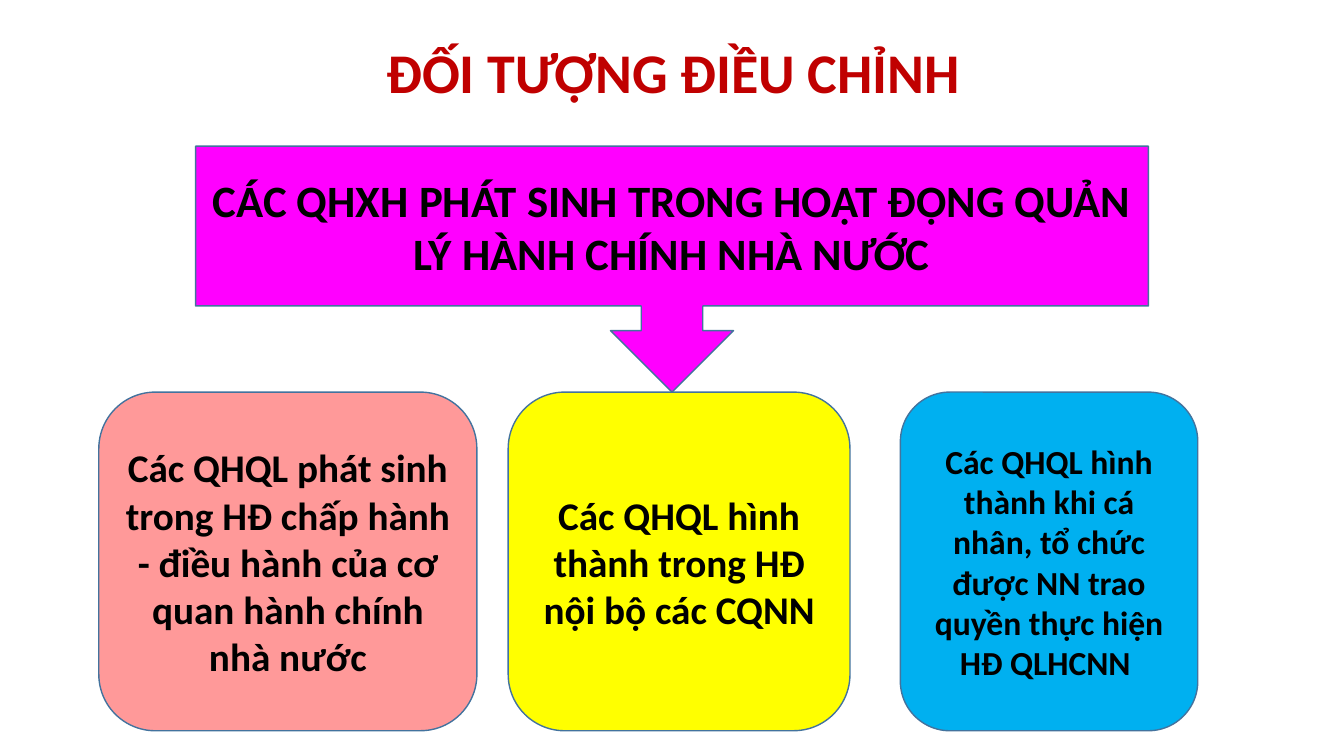
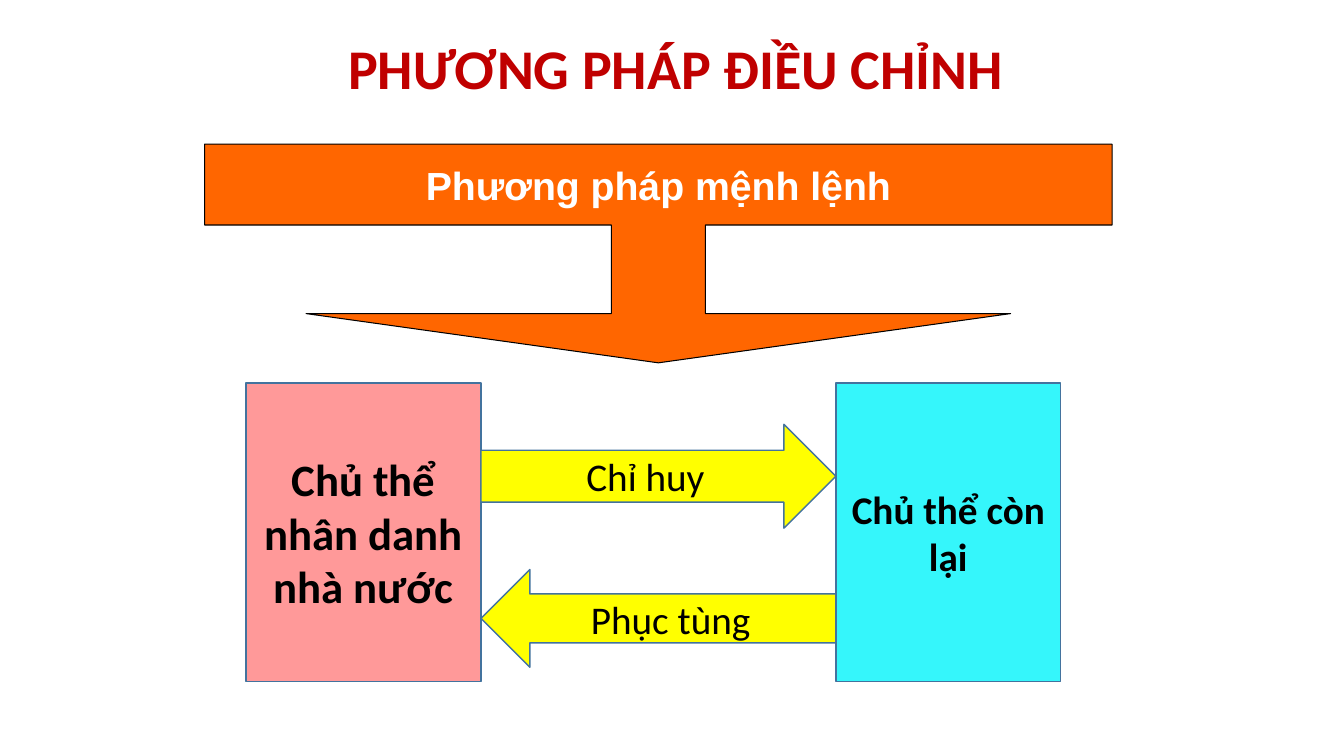
from dataclasses import dataclass

from pptx import Presentation
from pptx.dml.color import RGBColor
from pptx.enum.shapes import MSO_SHAPE
from pptx.enum.text import MSO_ANCHOR, PP_ALIGN
from pptx.util import Inches, Pt

CENTER = PP_ALIGN.CENTER
MIDDLE = MSO_ANCHOR.MIDDLE
CALLOUT = MSO_SHAPE.DOWN_ARROW_CALLOUT
ROUNDED = MSO_SHAPE.ROUNDED_RECTANGLE
RECTANGLE = MSO_SHAPE.RECTANGLE
RIGHT_ARROW = MSO_SHAPE.RIGHT_ARROW
LEFT_ARROW = MSO_SHAPE.LEFT_ARROW
BLANK_LAYOUT = 6


@dataclass(frozen=True)
class Theme:
    font: str = "Calibri"
    callout_font: str = "Arial"
    title_color: str = "C00000"
    outline: str = "43739E"
    black: str = "000000"
    white: str = "FFFFFF"
    magenta: str = "FF00FF"
    orange: str = "FF6600"
    pink: str = "FF9999"
    yellow: str = "FFFF00"
    blue: str = "00B0F0"
    cyan: str = "35F6FB"
    title_size: float = 40
    large: float = 32
    medium: float = 28
    small: float = 24


THEME = Theme()


def set_text(shape, text, size, color=THEME.black, bold=True, font=THEME.font):
    """Write one centred paragraph in the middle of a shape."""
    frame = shape.text_frame
    frame.word_wrap = True
    frame.vertical_anchor = MIDDLE
    frame.text = text
    para = frame.paragraphs[0]
    para.alignment = CENTER
    span = para.runs[0].font
    span.name, span.size, span.bold = font, Pt(size), bold
    span.color.rgb = RGBColor.from_string(color)
    return para


def add_title(page, box, text):
    title = page.shapes.add_textbox(*map(Inches, box))
    para = set_text(title, text, THEME.title_size, THEME.title_color)
    para.line_spacing = 0.9


def add_block(page, kind, box, fill, text, size, outline=THEME.outline,
              width=1, **text_style):
    """Add a filled, outlined shape with its label."""
    block = page.shapes.add_shape(kind, *map(Inches, box))
    block.shadow.inherit = False
    block.fill.solid()
    block.fill.fore_color.rgb = RGBColor.from_string(fill)
    block.line.color.rgb = RGBColor.from_string(outline)
    block.line.width = Pt(width)
    set_text(block, text, size, **text_style)
    return block


def add_relation_cards(page, box):
    """Place the three kinds of relations side by side."""
    left, top, _, height = box
    cards = [
        (0, 3.75, THEME.pink, THEME.medium,
         "Các QHQL phát sinh trong HĐ chấp hành - điều hành của cơ quan "
         "hành chính nhà nước"),
        (4.06, 3.39, THEME.yellow, THEME.medium,
         "Các QHQL hình thành trong HĐ nội bộ các CQNN"),
        (7.95, 2.95, THEME.blue, THEME.small,
         "Các QHQL hình thành khi cá nhân, tổ chức được NN trao quyền "
         "thực hiện HĐ QLHCNN "),
    ]
    for offset, width, fill, size, text in cards:
        add_block(page, ROUNDED, (left + offset, top, width, height),
                  fill, text, size)


def add_subject_exchange(page, box):
    """Place two subjects at the ends of the box and the arrows between."""
    left, top, width, height = box
    state_width, other_width = 2.33, 2.23
    gap_left = left + state_width
    gap_width = width - state_width - other_width

    # Subjects
    add_block(page, RECTANGLE, (left, top, state_width, height), THEME.pink,
              "Chủ thể nhân danh nhà nước", THEME.large)
    add_block(page, RECTANGLE, (gap_left + gap_width, top, other_width, height),
              THEME.cyan, "Chủ thể còn lại", THEME.medium)

    # Command and obedience
    arrows = [(RIGHT_ARROW, 0.41, 1.03, "Chỉ huy"),
              (LEFT_ARROW, 1.85, 0.97, "Phục tùng")]
    for kind, offset, arrow_height, text in arrows:
        add_block(page, kind, (gap_left, top + offset, gap_width, arrow_height),
                  THEME.yellow, text, THEME.medium, bold=False)


def build_scope_slide(page):
    add_title(page, (0.98, 0.18, 11.39, 1.14), "ĐỐI TƯỢNG ĐIỀU CHỈNH")
    add_block(page, CALLOUT, (1.94, 1.45, 9.45, 2.44), THEME.magenta,
              "CÁC QHXH PHÁT SINH TRONG HOẠT ĐỘNG QUẢN LÝ HÀNH CHÍNH NHÀ NƯỚC",
              THEME.large)
    add_relation_cards(page, (0.98, 3.89, 10.9, 3.36))


def build_method_slide(page):
    add_title(page, (1.02, 0.41, 11.36, 0.6), "PHƯƠNG PHÁP ĐIỀU CHỈNH")
    callout = add_block(page, CALLOUT, (2.03, 1.43, 9, 2.17), THEME.orange,
                        "Phương pháp mệnh lệnh", THEME.medium,
                        outline=THEME.black, width=0.75, color=THEME.white,
                        font=THEME.callout_font)
    # Shaft width, head half-width, head length, box height
    for index, value in enumerate((0.43, 1.61, 0.225, 0.37)):
        callout.adjustments[index] = value
    add_subject_exchange(page, (2.44, 3.8, 8.08, 2.96))


def main():
    deck = Presentation()
    deck.slide_width, deck.slide_height = Inches(13.33), Inches(7.5)
    for build in (build_scope_slide, build_method_slide):
        build(deck.slides.add_slide(deck.slide_layouts[BLANK_LAYOUT]))
    deck.save("out.pptx")


if __name__ == "__main__":
    main()
